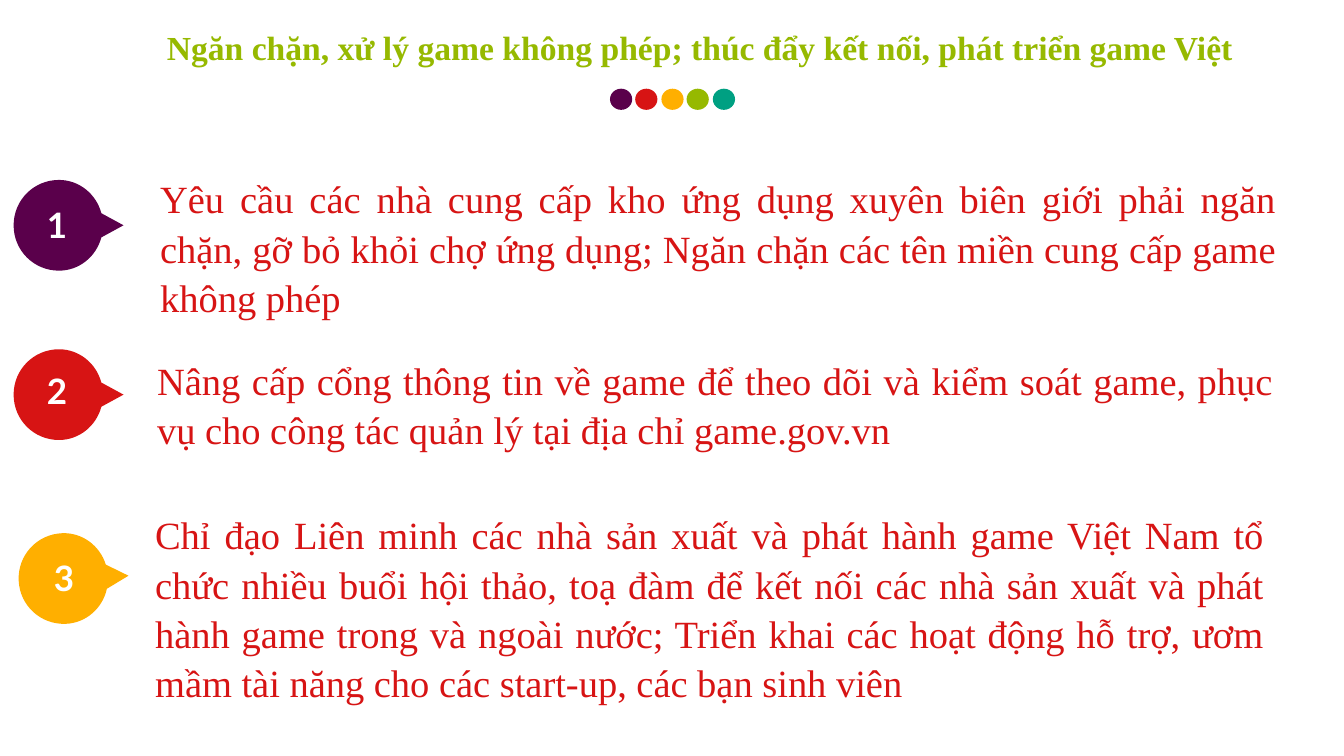
from lxml import etree
from pptx import Presentation
from pptx.dml.color import RGBColor
from pptx.enum.shapes import MSO_SHAPE as SHAPE
from pptx.enum.text import MSO_ANCHOR as ANCHOR, MSO_AUTO_SIZE as AUTO, PP_ALIGN as ALIGN
from pptx.oxml.ns import qn
from pptx.util import Pt

PX = 9144  # EMU per px, 100 px to the inch
PURPLE = RGBColor(0x5A, 0x00, 0x4B)
RED = RGBColor(0xD7, 0x14, 0x14)
AMBER = RGBColor(0xFF, 0xAF, 0x00)
GREEN = RGBColor(0x96, 0xB9, 0x00)
TEAL = RGBColor(0x00, 0xA0, 0x82)
WHITE = RGBColor(0xFF, 0xFF, 0xFF)

# Pin pointing down: a start point, then two control points and an end point per curve
PIN_START = (45, 0)
PIN_CURVES = [
    (70, 0), (90, 20), (90, 45),
    (90, 65), (76, 82), (57, 87),
    (45, 109), (45, 109), (45, 109),
    (33, 87), (33, 87), (33, 87),
    (14, 82), (0, 65), (0, 45),
    (0, 20), (20, 0), (45, 0),
]


def set_text(sp, text, size, color, font="Times New Roman", bold=False, align=ALIGN.JUSTIFY,
             spacing=None, after=None, wrap=True, margins=(10, 5)):
    tf = sp.text_frame
    tf.word_wrap, tf.auto_size, tf.vertical_anchor = wrap, AUTO.NONE, ANCHOR.TOP
    tf.margin_left = tf.margin_right = margins[0] * PX
    tf.margin_top = tf.margin_bottom = margins[1] * PX
    p = tf.paragraphs[0]
    p.alignment, p.line_spacing, p.space_after = align, spacing, after
    r = p.add_run()
    r.text = text
    r.font.size, r.font.name, r.font.bold = Pt(size), font, bold
    r.font.color.rgb = color


def paint(sp, color):
    sp.shadow.inherit = False
    sp.fill.solid()
    sp.fill.fore_color.rgb = color
    sp.line.fill.background()


prs = Presentation()
prs.slide_width, prs.slide_height = 1333 * PX, 750 * PX
s = prs.slides.add_slide(prs.slide_layouts[5])

title = s.shapes.title
title.left, title.top, title.width, title.height = [v * PX for v in (134, 27, 1120, 40)]
set_text(title, "Ngăn chặn, xử lý game không phép; thúc đẩy kết nối, phát triển game Việt",
         24, GREEN, bold=True, align=ALIGN.CENTER, margins=(0, 0))

dots = s.shapes.add_group_shape()
for i, color in enumerate((PURPLE, RED, AMBER, GREEN, TEAL)):
    left = 605 + i * 51 // 2
    paint(dots.shapes.add_shape(SHAPE.OVAL, left * PX, 88 * PX, 22 * PX, 21 * PX), color)

# color, pin corner, pin rotation, label corner, text box, space after, text
ITEMS = [
    (PURPLE, (23, 169), 270, (37, 197), (149, 166, 1127, 155), 0,
     "Yêu cầu các nhà cung cấp kho ứng dụng xuyên biên giới phải ngăn chặn, gỡ bỏ khỏi chợ "
     "ứng dụng; Ngăn chặn các tên miền cung cấp game không phép"),
    (RED, (23, 337), 270, (37, 362), (146, 346, 1127, 106), 0,
     "Nâng cấp cổng thông tin về game để theo dõi và kiểm soát game, phục vụ cho công tác "
     "quản lý tại địa chỉ game.gov.vn"),
    (AMBER, (28, 519), 267.5, (44, 547), (144, 499, 1120, 205), 4,
     "Chỉ đạo Liên minh các nhà sản xuất và phát hành game Việt Nam tổ chức nhiều buổi hội "
     "thảo, toạ đàm để kết nối các nhà sản xuất và phát hành game trong và ngoài nước; Triển "
     "khai các hoạt động hỗ trợ, ươm mầm tài năng cho các start-up, các bạn sinh viên"),
]

for number, (color, pin_at, rotation, label_at, box, after, text) in enumerate(ITEMS, 1):
    group = s.shapes.add_group_shape()
    builder = group.shapes.build_freeform(*PIN_START, scale=PX)
    builder.add_line_segments(PIN_CURVES, close=True)
    pin = builder.convert_to_shape(pin_at[0] * PX, pin_at[1] * PX)
    pin.rotation = rotation
    paint(pin, color)
    lines = list(pin.element.iter(qn("a:lnTo")))
    for first in range(0, len(lines), 3):
        curve = etree.Element(qn("a:cubicBezTo"))
        lines[first].addprevious(curve)
        for line in lines[first:first + 3]:
            curve.append(line[0])
            line.getparent().remove(line)

    label = group.shapes.add_textbox(label_at[0] * PX, label_at[1] * PX, 39 * PX, 52 * PX)
    set_text(label, str(number), 25, WHITE, font="Lato", bold=True, align=ALIGN.CENTER, wrap=False)

    body = s.shapes.add_textbox(*[v * PX for v in box])
    set_text(body, text, 27.5, RED, spacing=1.07, after=Pt(after))

prs.save("out.pptx")
